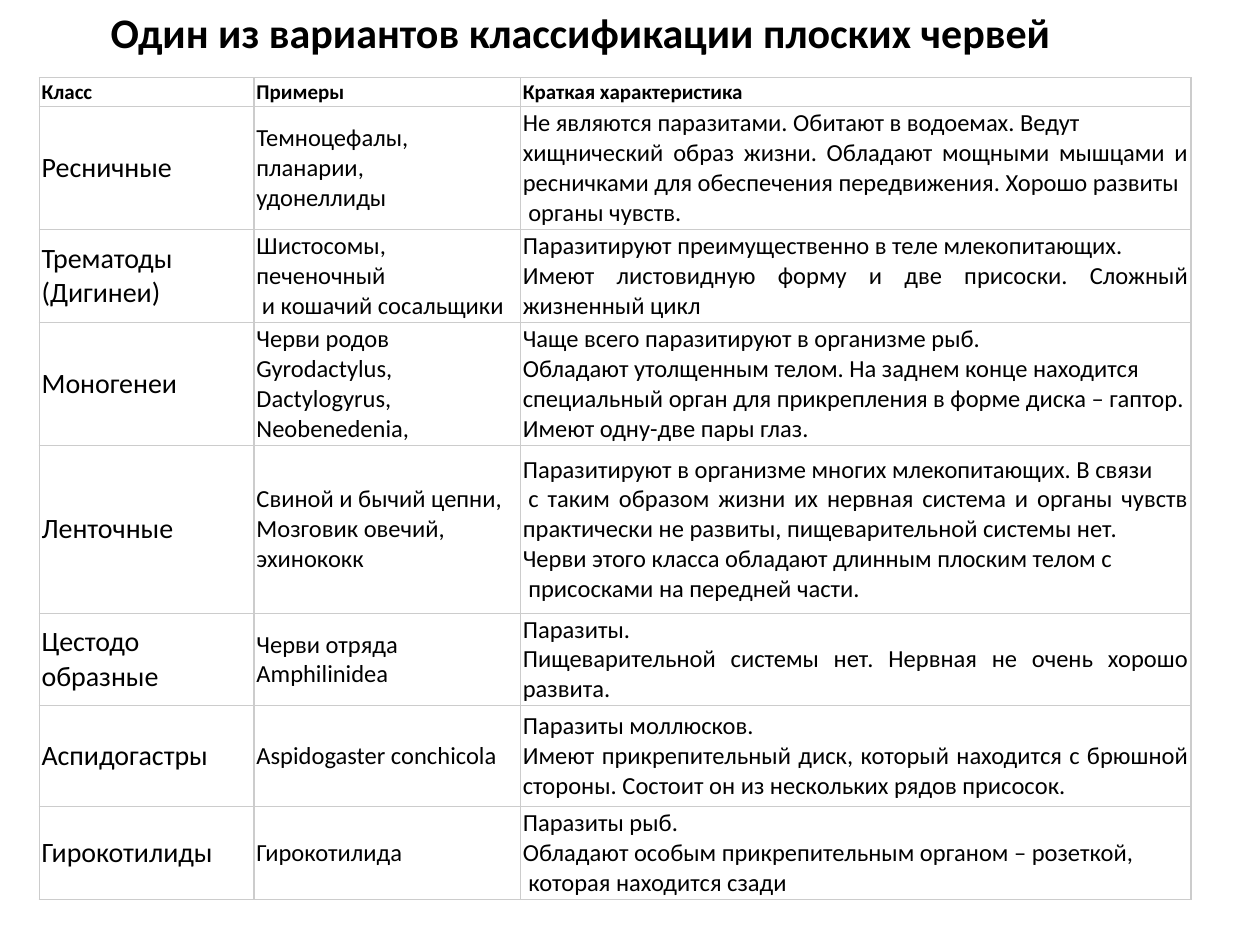
import pptx
import pptx.dml.color
import pptx.enum.text
import pptx.oxml
import pptx.oxml.ns
import pptx.util
from pptx.util import Cm

BLACK = pptx.dml.color.RGBColor(0x00, 0x00, 0x00)
WHITE = pptx.dml.color.RGBColor(0xFF, 0xFF, 0xFF)
GREY = pptx.dml.color.RGBColor(0xCC, 0xCC, 0xCC)
LEFT = pptx.enum.text.PP_ALIGN.LEFT
JUSTIFY = pptx.enum.text.PP_ALIGN.JUSTIFY

COLUMN_WIDTHS = [4.33, 5.37, 13.52]
ROW_HEIGHTS = [0.58, 2.48, 1.87, 2.48, 3.38, 1.87, 2.03, 1.87]
COLUMN_FORMATS = [(16, LEFT), (14, LEFT), (14, JUSTIFY)]

HEADERS = ["Класс", "Примеры", "Краткая характеристика"]
# Each cell holds one paragraph per line of text
CLASSES = [
    ("Ресничные",
     "Темноцефалы, планарии,\nудонеллиды",
     "Не являются паразитами. Обитают в водоемах. Ведут\n"
     "хищнический образ жизни. Обладают мощными мышцами и ресничками "
     "для обеспечения передвижения. Хорошо развиты\n"
     "органы чувств."),
    ("Трематоды\n(Дигинеи)",
     "Шистосомы, печеночный\nи кошачий сосальщики",
     "Паразитируют преимущественно в теле млекопитающих.\n"
     "Имеют листовидную форму и две присоски. Сложный жизненный цикл"),
    ("Моногенеи",
     "Черви родов Gyrodactylus,\nDactylogyrus, Neobenedenia,",
     "Чаще всего паразитируют в организме рыб.\n"
     "Обладают утолщенным телом. На заднем конце находится\n"
     "специальный орган для прикрепления в форме диска – гаптор.\n"
     "Имеют одну-две пары глаз."),
    ("Ленточные",
     "Свиной и бычий цепни,\nМозговик овечий,\nэхинококк",
     "Паразитируют в организме многих млекопитающих. В связи\n"
     "с таким образом жизни их нервная система и органы чувств "
     "практически не развиты, пищеварительной системы нет.\n"
     "Черви этого класса обладают длинным плоским телом с\n"
     "присосками на передней части."),
    ("Цестодо\nобразные",
     "Черви отряда Amphilinidea",
     "Паразиты.\n"
     "Пищеварительной системы нет. Нервная не очень хорошо развита."),
    ("Аспидогастры",
     "Aspidogaster conchicola",
     "Паразиты моллюсков.\n"
     "Имеют прикрепительный диск, который находится с брюшной стороны. "
     "Состоит он из нескольких рядов присосок."),
    ("Гирокотилиды",
     "Гирокотилида",
     "Паразиты рыб.\n"
     "Обладают особым прикрепительным органом – розеткой,\n"
     "которая находится сзади"),
]
# Paragraphs with a slightly indented first line start with these words
INDENTED = ("органы чувств", "и кошачий", "с таким", "присосками", "которая")


def write_text(text_frame, text, size, bold=False, alignment=LEFT):
    for number, line in enumerate(text.split("\n")):
        paragraph = text_frame.paragraphs[0] if number == 0 else text_frame.add_paragraph()
        paragraph.alignment = alignment
        if line.startswith(INDENTED):
            paragraph._p.get_or_add_pPr().set("indent", str(Cm(0.11)))
        run = paragraph.add_run()
        run.text = line
        run.font.name = "Calibri"
        run.font.size = pptx.util.Pt(size)
        run.font.bold = bold
        run.font.color.rgb = BLACK


def style_cell(cell):
    properties = cell._tc.get_or_add_tcPr()
    for side in ("lnL", "lnR", "lnT", "lnB"):
        properties.append(pptx.oxml.parse_xml(
            f'<a:{side} {pptx.oxml.ns.nsdecls("a")} w="{pptx.util.Pt(0.75)}">'
            f'<a:solidFill><a:srgbClr val="{GREY}"/></a:solidFill></a:{side}>'))
    cell.fill.solid()
    cell.fill.fore_color.rgb = WHITE
    cell.vertical_anchor = pptx.enum.text.MSO_ANCHOR.MIDDLE
    cell.margin_left = cell.margin_right = Cm(0.05)
    cell.margin_top = cell.margin_bottom = Cm(0.03)


presentation = pptx.Presentation()
presentation.slide_width = Cm(25.4)
presentation.slide_height = Cm(19.05)
slide = presentation.slides.add_slide(presentation.slide_layouts[6])

# Classification table
table = slide.shapes.add_table(
    len(ROW_HEIGHTS), len(COLUMN_WIDTHS), Cm(0.79), Cm(1.57),
    Cm(sum(COLUMN_WIDTHS)), Cm(sum(ROW_HEIGHTS))).table
table.horz_banding = False
for column, width in zip(table.columns, COLUMN_WIDTHS):
    column.width = Cm(width)
for row, height in zip(table.rows, ROW_HEIGHTS):
    row.height = Cm(height)

# Header row, then one row per class
for row_number, texts in enumerate([HEADERS, *CLASSES]):
    for column_number, text in enumerate(texts):
        cell = table.cell(row_number, column_number)
        style_cell(cell)
        if row_number == 0:
            write_text(cell.text_frame, text, size=12, bold=True)
        else:
            size, alignment = COLUMN_FORMATS[column_number]
            write_text(cell.text_frame, text, size=size, alignment=alignment)

# Title
title = slide.shapes.add_textbox(Cm(1.98), Cm(0), Cm(19.66), Cm(1.27))
title.text_frame.word_wrap = False
title.text_frame.auto_size = pptx.enum.text.MSO_AUTO_SIZE.SHAPE_TO_FIT_TEXT
write_text(title.text_frame, "Один из вариантов классификации плоских червей",
           size=24, bold=True)

presentation.save("out.pptx")
